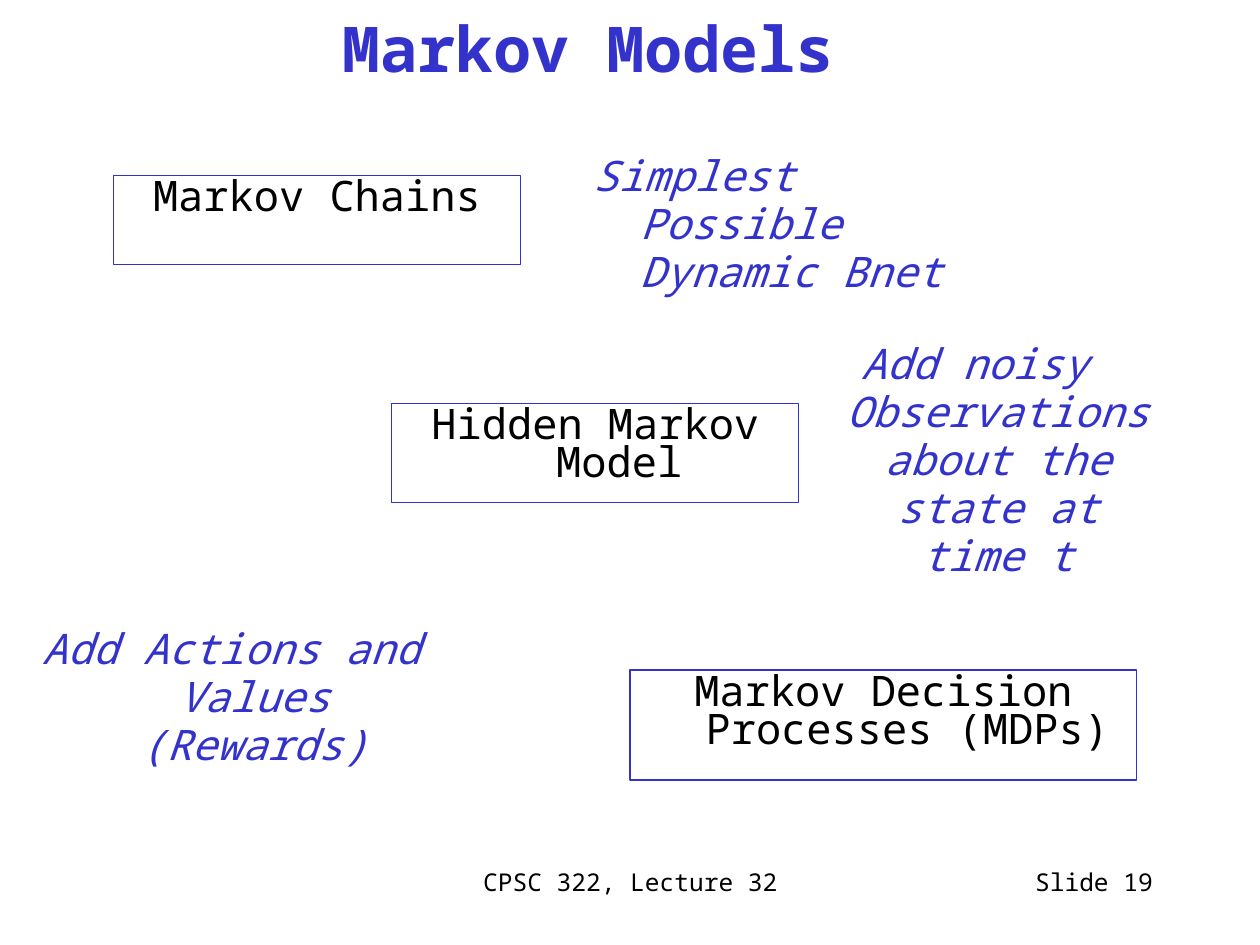
"""Build the Markov Models overview slide."""
import pptx
import pptx.dml.color
import pptx.enum.shapes
import pptx.enum.text
import pptx.util

Inches = pptx.util.Inches
Pt = pptx.util.Pt
ALIGN = pptx.enum.text.PP_ALIGN
ANCHOR = pptx.enum.text.MSO_ANCHOR

FONT = "Noto Sans Mono"
BLUE = "3333CC"
BLACK = "000000"

TITLE = ("Markov Models", (0, 0, 9.33, 0.75))
FOOTERS = [
    ("CPSC 322, Lecture 32", (3.42, 6.83, 3.17, 0.5), ALIGN.CENTER),
    ("Slide 19", (7.17, 6.83, 2.08, 0.5), ALIGN.RIGHT),
]
MODELS = [
    ("Markov Chains", (0.9, 1.39, 3.23, 0.71), 0.75),
    ("Hidden Markov Model", (3.11, 3.2, 3.23, 0.79), 0.75),
    ("Markov Decision Processes (MDPs)", (5, 5.32, 4.02, 0.87), 1),
]
REMARKS = [
    ("Simplest Possible Dynamic Bnet", (4.61, 1.17, 2.97, 0.86), ALIGN.LEFT),
    ("Add noisy Observations about the state at time t", (6.25, 2.66, 2.97, 0.86), ALIGN.CENTER),
    ("Add Actions and Values (Rewards)", (0, 4.92, 3.67, 0.86), ALIGN.CENTER),
]


def color(hex_value):
    return pptx.dml.color.RGBColor.from_string(hex_value)


def lengths(box):
    return [Inches(value) for value in box]


def write(shape, text, size, hex_value, align, anchor=ANCHOR.TOP, bold=False, italic=False):
    frame = shape.text_frame
    frame.word_wrap = True
    frame.auto_size = pptx.enum.text.MSO_AUTO_SIZE.NONE
    frame.vertical_anchor = anchor
    frame.margin_left = frame.margin_right = Inches(0.1)
    frame.margin_top = frame.margin_bottom = Inches(0.05)
    paragraph = frame.paragraphs[0]
    paragraph.alignment = align
    run = paragraph.add_run()
    run.text = text
    run.font.name = FONT
    run.font.size = Pt(size)
    run.font.bold = bold
    run.font.italic = italic
    run.font.color.rgb = color(hex_value)
    return paragraph


def hang(paragraph, indent, line_spacing, space_before):
    properties = paragraph._p.get_or_add_pPr()
    properties.set("marL", str(Inches(indent)))
    properties.set("indent", str(-Inches(indent)))
    paragraph.line_spacing = line_spacing
    paragraph.space_before = Pt(space_before)


def add_title(slide, text, box):
    title = slide.shapes.title
    title.left, title.top, title.width, title.height = lengths(box)
    write(title, text, 36, BLUE, ALIGN.CENTER, ANCHOR.MIDDLE, bold=True)


def add_footer(slide, text, box, align):
    write(slide.shapes.add_textbox(*lengths(box)), text, 14, BLACK, align)


def add_model(slide, text, box, line_width):
    rectangle = pptx.enum.shapes.MSO_SHAPE.RECTANGLE
    shape = slide.shapes.add_shape(rectangle, *lengths(box))
    shape.shadow.inherit = False
    shape.fill.background()
    shape.line.color.rgb = color(BLUE)
    shape.line.width = Pt(line_width)
    hang(write(shape, text, 24, BLACK, ALIGN.CENTER), 0.38, 0.75, 4.8)


def add_remark(slide, text, box, align):
    shape = slide.shapes.add_textbox(*lengths(box))
    hang(write(shape, text, 24, BLUE, align, italic=True), 0.37, 0.95, 18)


def main():
    presentation = pptx.Presentation()
    presentation.slide_width = Inches(10)
    presentation.slide_height = Inches(7.5)
    slide = presentation.slides.add_slide(presentation.slide_layouts[5])
    add_title(slide, *TITLE)
    for builder, items in ((add_footer, FOOTERS), (add_model, MODELS), (add_remark, REMARKS)):
        for item in items:
            builder(slide, *item)
    presentation.save("out.pptx")


if __name__ == "__main__":
    main()
